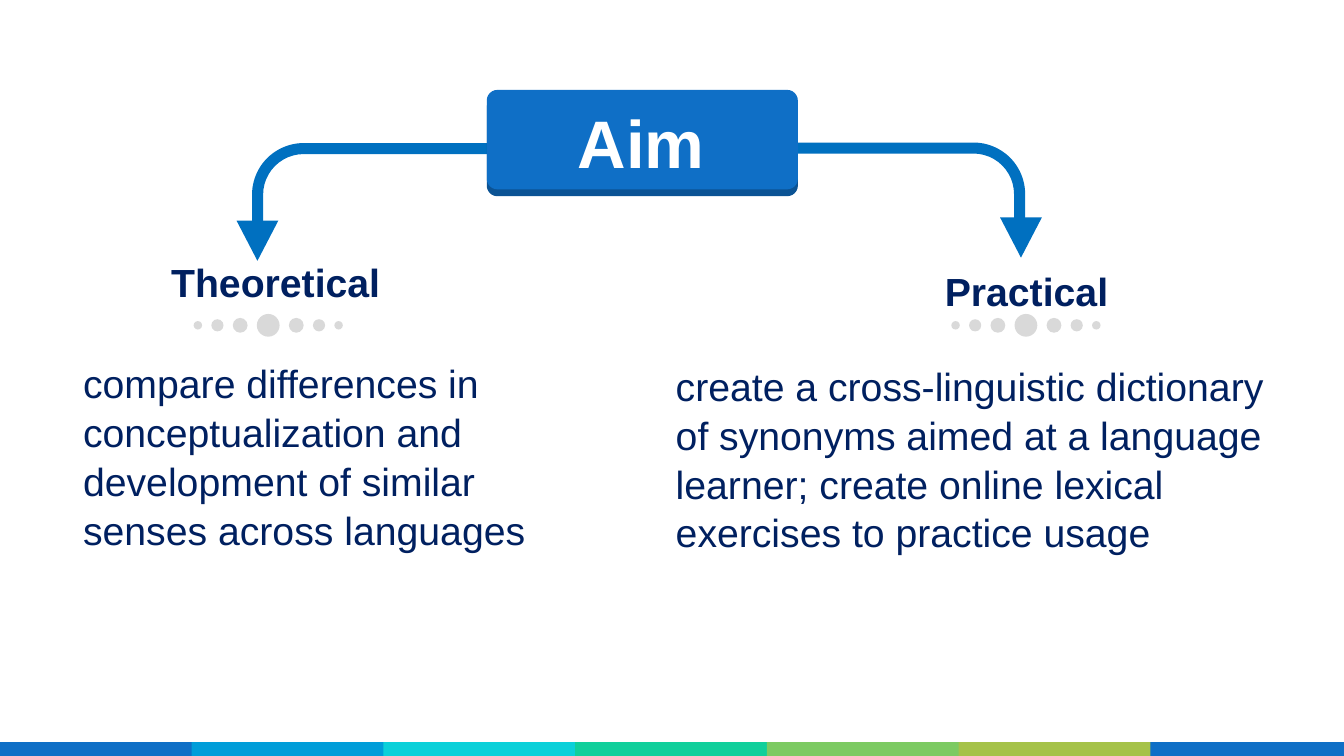
from lxml.etree import SubElement
from pptx import Presentation
from pptx.dml.color import RGBColor as RGB
from pptx.enum.shapes import MSO_SHAPE as SHAPE
from pptx.enum.text import MSO_ANCHOR as ANCHOR, MSO_AUTO_SIZE as AUTO, PP_ALIGN as ALIGN
from pptx.oxml.ns import qn
from pptx.util import Cm, Pt

THEME = dict(
    font="Arial", title_size=36, text_size=21,
    white="FFFFFF", text="002060", arrow="0070C0", dot="D9D9D9",
    box="0F6FC6", box_edge="0B5394",
    bar=["0F6FC6", "009DD9", "0BD0D9", "10CF9B", "7CCA62", "A5C249", "0F6FC6"],
)

TITLE = "Aim"
BRANCHES = [
    dict(
        heading="Theoretical", heading_box=(2.66, 4.88, 5.1, 0.95),
        body="compare differences in conceptualization and development of similar "
             "senses across languages",
        body_box=(1.57, 6.76, 9, 3.8),
        arrow=(6.43, 1.04, 1.9, 5.23), flips=("flipH",),
        head=(4.47, 4.17), dots_x=5.07,
    ),
    dict(
        heading="Practical", heading_box=(16.85, 5.06, 5.1, 0.95),
        body="create a cross-linguistic dictionary of synonyms aimed at a language "
             "learner; create online lexical exercises to practice usage",
        body_box=(12.77, 6.81, 11.4, 3.8),
        arrow=(16.28, 1.5, 1.9, 4.29), flips=("flipH", "flipV"),
        head=(18.9, 4.11), dots_x=19.39,
    ),
]
DOTS = [(0, 0.43), (0.53, 0.28), (0.96, 0.23), (1.33, 0.16)]
DOTS_Y = 6.15
SLIDE_W, SLIDE_H = 25.4, 14.29
BAR_W, BAR_H = 3.66, 0.26
BOX_X, BOX_Y, BOX_W, BOX_H = 9.2, 1.7, 5.88, 1.88


def add_shape(s, kind, box, color, adjustments=()):
    sp = s.shapes.add_shape(kind, *map(Cm, box))
    sp.shadow.inherit = False
    sp.fill.solid()
    sp.fill.fore_color.rgb = RGB.from_string(color)
    sp.line.fill.background()
    for i, value in enumerate(adjustments):
        sp.adjustments[i] = value
    return sp


def fill_text(sp, box, text, size, color, bold=False, align=ALIGN.LEFT,
              anchor=ANCHOR.TOP, spacing=1.0):
    sp.left, sp.top, sp.width, sp.height = map(Cm, box)
    tf = sp.text_frame
    tf.text = text
    tf.word_wrap = True
    tf.auto_size = AUTO.NONE
    tf.vertical_anchor = anchor
    tf.margin_left = tf.margin_right = tf.margin_top = tf.margin_bottom = 0
    p = tf.paragraphs[0]
    p.alignment = align
    p.space_before = Pt(0)
    p.line_spacing = spacing
    pPr = p._p.get_or_add_pPr()
    pPr.set("marL", "0")
    pPr.set("indent", "0")
    SubElement(pPr, qn("a:buNone"))
    font = p.runs[0].font
    font.name, font.size, font.bold = THEME["font"], Pt(size), bold
    font.color.rgb = RGB.from_string(color)


def add_bar(s):
    step = (SLIDE_W - BAR_W) / (len(THEME["bar"]) - 1)
    for i, color in enumerate(THEME["bar"]):
        add_shape(s, SHAPE.RECTANGLE, (i * step, SLIDE_H - BAR_H, BAR_W, BAR_H), color)


def add_branch(s, branch, heading, body):
    size, color = THEME["text_size"], THEME["text"]
    fill_text(heading, branch["heading_box"], branch["heading"], size, color,
              bold=True, align=ALIGN.CENTER)
    fill_text(body, branch["body_box"], branch["body"], size, color, spacing=1.04)

    arrow = add_shape(s, SHAPE.BENT_ARROW, branch["arrow"], THEME["arrow"],
                      (0.177, 0.055, 0, 0.513))
    arrow.rotation = 270
    for flip in branch["flips"]:
        arrow.element.spPr.get_or_add_xfrm().set(flip, "1")
    head = add_shape(s, SHAPE.ISOSCELES_TRIANGLE, (*branch["head"], 0.79, 0.76),
                     THEME["arrow"])
    head.rotation = 180

    for offset, d in DOTS:
        for dx in sorted({-offset, offset}):
            x = branch["dots_x"] + dx
            add_shape(s, SHAPE.OVAL, (x - d / 2, DOTS_Y - d / 2, d, d), THEME["dot"])


def add_title(s, title):
    for dy, color in ((0.13, THEME["box_edge"]), (0, THEME["box"])):
        sp = add_shape(s, SHAPE.ROUNDED_RECTANGLE, (BOX_X, BOX_Y + dy, BOX_W, BOX_H),
                       color, (0.107,))
    fill_text(title, (10.64, 1.78, 2.95, 1.8), TITLE, THEME["title_size"],
              THEME["white"], bold=True, align=ALIGN.CENTER, anchor=ANCHOR.MIDDLE)
    sp.element.addnext(title.element)


def main():
    prs = Presentation()
    prs.slide_width, prs.slide_height = Cm(SLIDE_W), Cm(SLIDE_H)
    s = prs.slides.add_slide(prs.slide_layouts.get_by_name("Comparison"))
    title, *texts = s.placeholders
    add_bar(s)
    for branch, heading, body in zip(BRANCHES, texts[::2], texts[1::2]):
        add_branch(s, branch, heading, body)
    add_title(s, title)
    prs.save("out.pptx")


if __name__ == "__main__":
    main()
